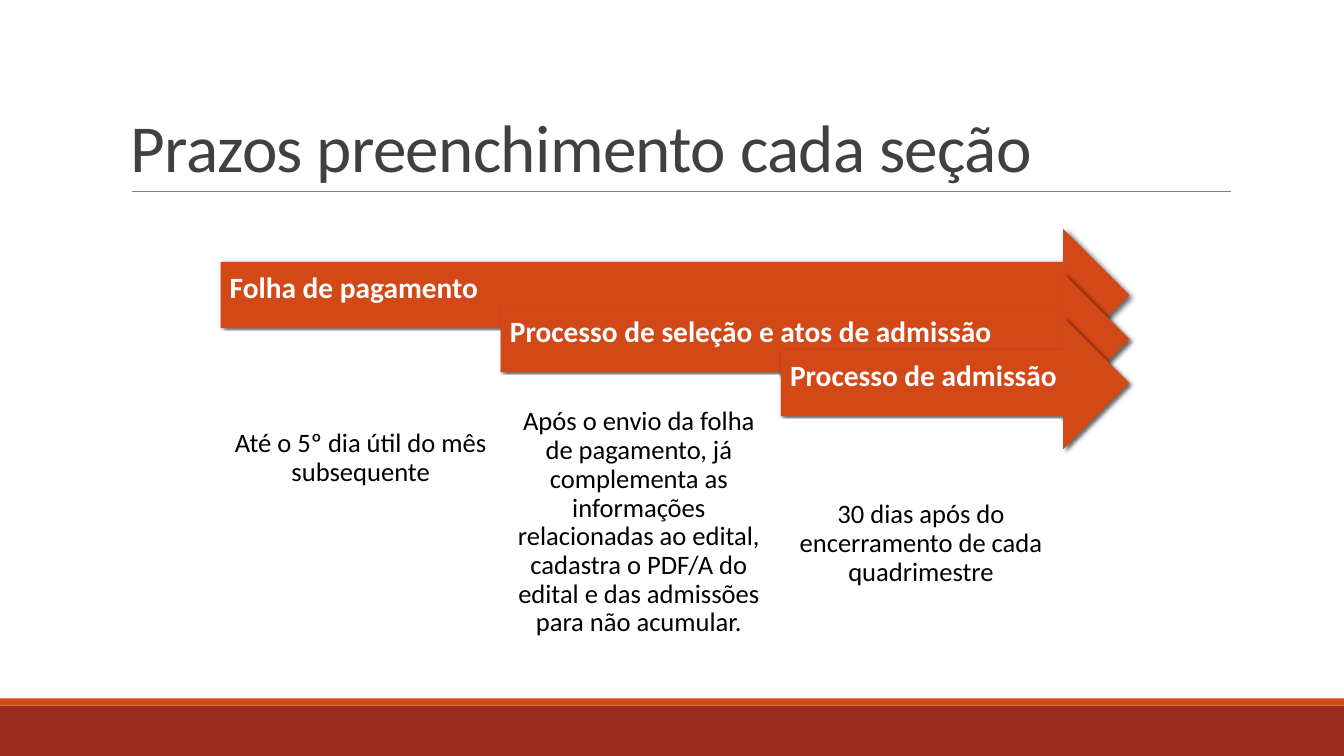
import pptx
import pptx.dml.color
import pptx.enum.shapes
import pptx.enum.text
import pptx.oxml
import pptx.oxml.ns
import pptx.util

Cm = pptx.util.Cm
Pt = pptx.util.Pt
ALIGN = pptx.enum.text.PP_ALIGN
ANCHOR = pptx.enum.text.MSO_ANCHOR
SHAPE = pptx.enum.shapes.MSO_SHAPE

COLORS = {
    "orange": "D34817",
    "brick": "9B2D1F",
    "rule": "808080",
    "title": "404040",
    "white": "FFFFFF",
    "black": "000000",
}
FONT = "Calibri"
SLIDE_WIDTH, SLIDE_HEIGHT = 33.87, 19.05
DEADLINES = [
    ("Folha de pagamento", "Até o 5º dia útil do mês subsequente", 0, 6.43),
    (
        "Processo de seleção e atos de admissão",
        "Após o envio da folha de pagamento, já complementa as informações "
        "relacionadas ao edital, cadastra o PDF/A do edital e das admissões "
        "para não acumular.",
        -0.05,
        7.47,
    ),
    ("Processo de admissão", "30 dias após do encerramento de cada quadrimestre", 0, 6.32),
]


def color(name):
    """Return the named palette colour."""
    return pptx.dml.color.RGBColor.from_string(COLORS[name])


def write_text(frame, text, *, size, fill, bold=False, align=ALIGN.LEFT,
               anchor=ANCHOR.MIDDLE, spacing=0.9, tracking=None, insets=None):
    """Write one formatted paragraph into a text frame."""
    frame.word_wrap = True
    frame.auto_size = pptx.enum.text.MSO_AUTO_SIZE.NONE
    frame.vertical_anchor = anchor
    if insets:
        (frame.margin_left, frame.margin_top,
         frame.margin_right, frame.margin_bottom) = map(Cm, insets)
    paragraph = frame.paragraphs[0]
    paragraph.alignment = align
    paragraph.line_spacing = spacing
    run = paragraph.add_run()
    run.text = text
    run.font.name = FONT
    run.font.size = Pt(size)
    run.font.bold = bold
    run.font.color.rgb = color(fill)
    if tracking is not None:
        run.font._element.set("spc", str(round(tracking * 100)))


def add_filled(slide, preset, box, fill):
    """Add a borderless flat shape in a box given in centimetres."""
    shape = slide.shapes.add_shape(preset, *map(Cm, box))
    shape.fill.solid()
    shape.fill.fore_color.rgb = color(fill)
    shape.line.fill.background()
    shape.shadow.inherit = False
    return shape


def cast_shadow(shape):
    """Give a shape a soft shadow towards the lower right."""
    effects = shape._element.spPr.find(pptx.oxml.ns.qn("a:effectLst"))
    effects.append(pptx.oxml.parse_xml(
        f'<a:outerShdw {pptx.oxml.ns.nsdecls("a")} blurRad="{Pt(3)}" dist="{Pt(2)}" '
        f'dir="{45 * 60000}" algn="tl" rotWithShape="0">'
        f'<a:srgbClr val="{COLORS["black"]}"><a:alpha val="60000"/></a:srgbClr>'
        '</a:outerShdw>'))


def build_footer(slide, left, top, width, height):
    """Draw the footer band with its thin accent strip on top."""
    strip = 0.18
    add_filled(slide, SHAPE.RECTANGLE, (left, top + strip, width, height - strip), "brick")
    add_filled(slide, SHAPE.RECTANGLE, (left, top, width, strip), "orange")


def build_heading(slide, left, top, width, height):
    """Place the title and the rule under it."""
    heading = slide.shapes.title
    heading.left, heading.top, heading.width, heading.height = map(
        Cm, (left, top, width, height))
    write_text(heading.text_frame, "Prazos preenchimento cada seção", size=48,
               fill="title", anchor=ANCHOR.BOTTOM, spacing=0.85, tracking=-0.5,
               insets=(0.25, 0.13, 0.25, 0.13))
    bottom = Cm(top + height)
    rule = slide.shapes.add_connector(
        pptx.enum.shapes.MSO_CONNECTOR.STRAIGHT,
        Cm(left + 0.28), bottom, Cm(left + width + 0.02), bottom)
    rule.line.color.rgb = color("rule")
    rule.line.width = Pt(0.5)
    rule._element.spPr.append(
        pptx.oxml.parse_xml(f'<a:effectLst {pptx.oxml.ns.nsdecls("a")}/>'))


def build_deadlines(slide, left, top, width):
    """Stagger the arrows to a shared right edge, each above its deadline."""
    column, step, arrow_height, detail_offset = 7.06, 1.11, 3.33, 2.56
    for index, (section, deadline, nudge, detail_height) in enumerate(DEADLINES):
        indent = index * column
        row_top = top + index * step
        arrow = add_filled(slide, SHAPE.RIGHT_ARROW,
                           (left + indent, row_top, width - indent, arrow_height), "orange")
        cast_shadow(arrow)
        write_text(arrow.text_frame, section, size=21, fill="white", bold=True,
                   insets=(0.23, 0.23, 0.71, 0.53))
        detail = add_filled(slide, SHAPE.RECTANGLE,
                            (left + indent + nudge, row_top + detail_offset,
                             column, detail_height), "white")
        write_text(detail.text_frame, deadline, size=19, fill="black",
                   align=ALIGN.CENTER, insets=(0.2,) * 4)


def main():
    """Build and save the deadlines slide."""
    deck = pptx.Presentation()
    deck.slide_width, deck.slide_height = Cm(SLIDE_WIDTH), Cm(SLIDE_HEIGHT)
    slide = deck.slides.add_slide(deck.slide_layouts[5])
    build_footer(slide, 0, 17.6, SLIDE_WIDTH, SLIDE_HEIGHT - 17.6)
    build_heading(slide, 3.05, 0.79, 27.94, 4.04)
    build_deadlines(slide, 5.56, 5.77, 22.9)
    deck.save("out.pptx")


if __name__ == "__main__":
    main()
